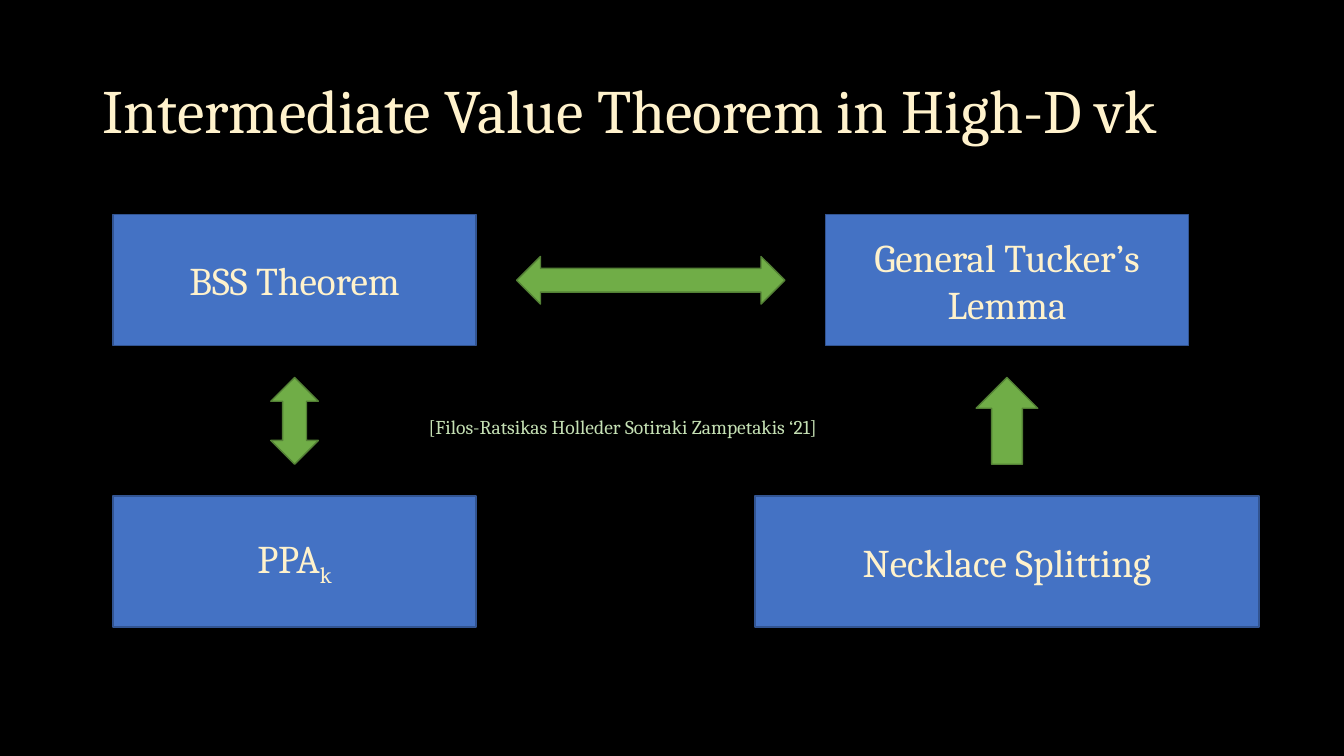
from pptx import Presentation
from pptx.dml.color import RGBColor
from pptx.enum.shapes import MSO_SHAPE
from pptx.enum.text import MSO_ANCHOR, MSO_AUTO_SIZE, PP_ALIGN
from pptx.util import Pt

FONT = "Cambria"
CREAM, MINT = "FFF2CC", "C5E0B4"
BLUE, NAVY = "4472C4", "325491"
GREEN, MOSS = "70AD47", "538035"

WIDE, HIGH = 259.2, 93.6
LEFT, RIGHT = 210.4, 719.3  # column centres
TOP, LOW = 200.2, 401.0  # row centres
MID_X, MID_Y = (LEFT + RIGHT) / 2, (TOP + LOW) / 2


def color(code):
    return RGBColor.from_string(code)


def style(para, size, code):
    for run in para.runs:
        run.font.name = FONT
        run.font.size = Pt(size)
        run.font.color.rgb = color(code)


def add_shape(slide, kind, x, y, w, h, fill, edge):
    """Place a shape centred on x, y."""
    shape = slide.shapes.add_shape(
        kind, Pt(x - w / 2), Pt(y - h / 2), Pt(w), Pt(h))
    shape.shadow.inherit = False
    shape.fill.solid()
    shape.fill.fore_color.rgb = color(fill)
    shape.line.color.rgb = color(edge)
    shape.line.width = Pt(1)
    return shape


def add_box(slide, x, y, text, w=WIDE, sub=""):
    """Add a labelled box; sub is set as a subscript after the text."""
    box = add_shape(slide, MSO_SHAPE.RECTANGLE, x, y, w, HIGH, BLUE, NAVY)
    frame = box.text_frame
    frame.word_wrap = True
    frame.vertical_anchor = MSO_ANCHOR.MIDDLE
    para = frame.paragraphs[0]
    para.text = text
    para.alignment = PP_ALIGN.CENTER
    if sub:
        run = para.add_run()
        run.text = sub
        run._r.get_or_add_rPr().set("baseline", "-25000")
    style(para, 28, CREAM)


def add_arrow(slide, kind, x, y, w, h, turn=0):
    arrow = add_shape(slide, kind, x, y, w, h, GREEN, MOSS)
    arrow.rotation = turn


def add_title(slide, x, y, w, h, text):
    title = slide.shapes.title
    title.left, title.top, title.width, title.height = map(Pt, (x, y, w, h))
    frame = title.text_frame
    frame.text = text
    frame.auto_size = MSO_AUTO_SIZE.NONE
    frame.vertical_anchor = MSO_ANCHOR.MIDDLE
    para = frame.paragraphs[0]
    para.alignment = PP_ALIGN.LEFT
    para.line_spacing = 0.9
    style(para, 44, CREAM)


def add_cite(slide, x, y, w, h, text):
    frame = slide.shapes.add_textbox(Pt(x), Pt(y), Pt(w), Pt(h)).text_frame
    frame.word_wrap = True
    frame.auto_size = MSO_AUTO_SIZE.SHAPE_TO_FIT_TEXT
    frame.text = text
    style(frame.paragraphs[0], 14, MINT)


def add_graph(slide):
    add_box(slide, LEFT, TOP, "BSS Theorem")
    add_box(slide, RIGHT, TOP, "General Tucker’s Lemma")
    add_box(slide, LEFT, LOW, "PPA", sub="k")
    add_box(slide, RIGHT, LOW, "Necklace Splitting", w=360)
    both = MSO_SHAPE.LEFT_RIGHT_ARROW
    add_arrow(slide, both, MID_X, TOP, 191.5, 34)
    add_arrow(slide, both, LEFT, MID_Y, 62, 34, turn=90)
    add_arrow(slide, MSO_SHAPE.UP_ARROW, RIGHT, MID_Y, 44, 62)


def main():
    deck = Presentation()
    deck.slide_width, deck.slide_height = Pt(960), Pt(540)
    slide = deck.slides.add_slide(deck.slide_layouts[5])
    back = slide.background.fill
    back.solid()
    back.fore_color.rgb = color("000000")
    add_title(slide, 66, 28.75, 865.5, 104.4,
              "Intermediate Value Theorem in High-D vk")
    add_graph(slide)
    add_cite(slide, 299, 293, 331, 24.5,
             "[Filos-Ratsikas Holleder Sotiraki Zampetakis ‘21]")
    deck.save("out.pptx")


if __name__ == "__main__":
    main()
